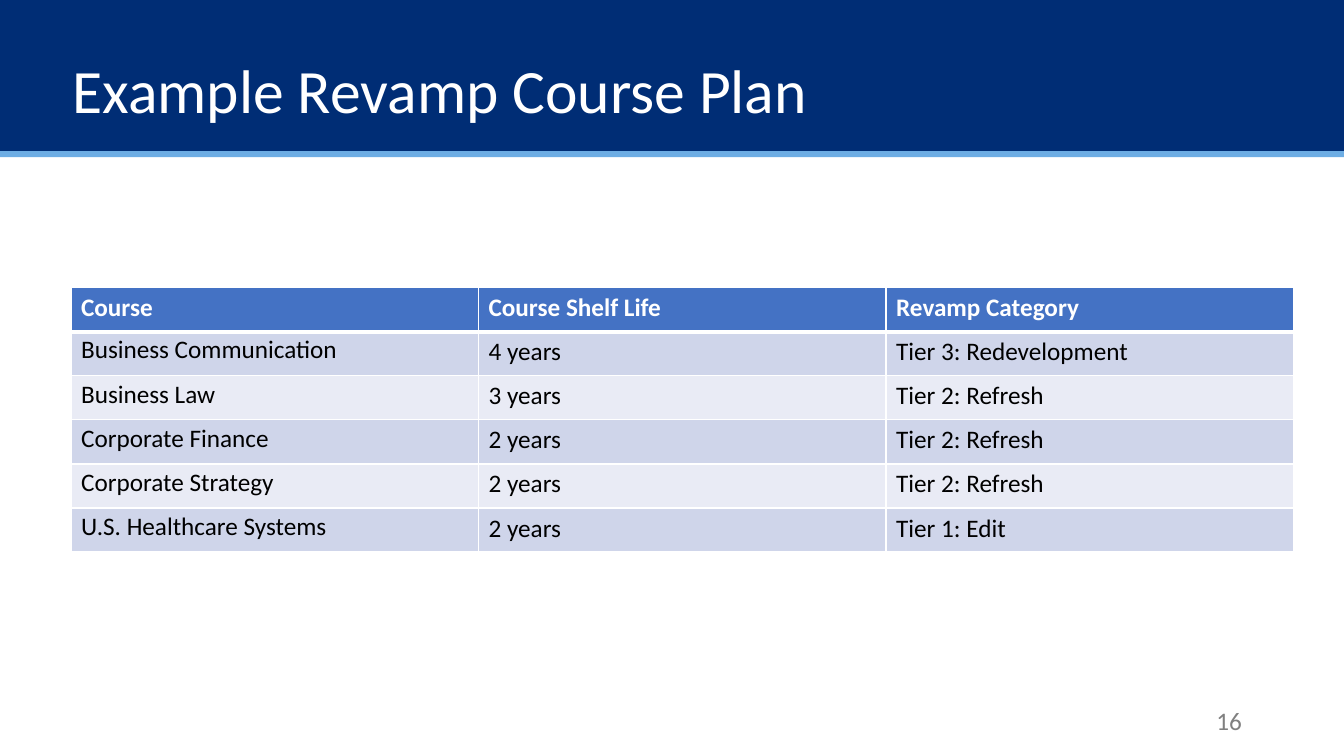
import pptx
import pptx.dml.color
import pptx.enum.shapes
import pptx.enum.text
import pptx.oxml
import pptx.oxml.ns
import pptx.util

Cm = pptx.util.Cm
Pt = pptx.util.Pt
RGBColor = pptx.dml.color.RGBColor
ALIGN = pptx.enum.text.PP_ALIGN

NAVY = RGBColor(0x00, 0x2D, 0x75)
SKY = RGBColor(0x6D, 0xAD, 0xE4)
HEADER_BLUE = RGBColor(0x44, 0x72, 0xC4)
BAND_DARK = RGBColor(0xCF, 0xD5, 0xEA)
BAND_LIGHT = RGBColor(0xE9, 0xEB, 0xF5)
WHITE = RGBColor(0xFF, 0xFF, 0xFF)
BLACK = RGBColor(0x00, 0x00, 0x00)
GREY = RGBColor(0x80, 0x80, 0x80)

SLIDE_WIDTH, SLIDE_HEIGHT = Cm(33.87), Cm(19.05)
COLUMN_WIDTH, ROW_HEIGHT = Cm(10.27), Cm(1.11)

COURSE_PLAN = [
    ("Course", "Course Shelf Life", "Revamp Category"),
    ("Business Communication", "4 years", "Tier 3: Redevelopment"),
    ("Business Law", "3 years", "Tier 2: Refresh"),
    ("Corporate Finance", "2 years", "Tier 2: Refresh"),
    ("Corporate Strategy", "2 years", "Tier 2: Refresh"),
    ("U.S. Healthcare Systems", "2 years", "Tier 1: Edit"),
]


def write_text(frame, text, *, size=18, color=BLACK, bold=False,
               align=ALIGN.LEFT, line_spacing=None):
    paragraph = frame.paragraphs[0]
    paragraph.alignment = align
    if line_spacing:
        paragraph.line_spacing = line_spacing
    run = paragraph.add_run()
    run.text = text
    run.font.name = "Calibri"
    run.font.size = Pt(size)
    run.font.bold = bold
    run.font.color.rgb = color


def add_band(slide, top, height, color):
    band = slide.shapes.add_shape(
        pptx.enum.shapes.MSO_SHAPE.RECTANGLE, 0, top, SLIDE_WIDTH, height)
    band.shadow.inherit = False
    band.fill.solid()
    band.fill.fore_color.rgb = color
    band.line.fill.background()


def add_label(slide, text, left, top, width, height, inset=Cm(0.25), **text_format):
    frame = slide.shapes.add_textbox(left, top, width, height).text_frame
    frame.word_wrap = True
    frame.vertical_anchor = pptx.enum.text.MSO_ANCHOR.TOP
    frame.margin_left = frame.margin_right = inset
    write_text(frame, text, **text_format)


def set_borders(cell, top, bottom):
    properties = cell._tc.get_or_add_tcPr()
    widths = {"L": 1, "R": 1, "T": top, "B": bottom}
    for position, (side, width) in enumerate(widths.items()):
        border = pptx.oxml.parse_xml(
            f'<a:ln{side} {pptx.oxml.ns.nsdecls("a")} w="{Pt(width)}">'
            f'<a:solidFill><a:srgbClr val="{WHITE}"/></a:solidFill></a:ln{side}>')
        properties.insert(position, border)


def add_course_table(slide, left, top):
    row_count, column_count = len(COURSE_PLAN), len(COURSE_PLAN[0])
    table = slide.shapes.add_table(
        row_count, column_count, left, top,
        COLUMN_WIDTH * column_count, ROW_HEIGHT * row_count).table
    for column in table.columns:
        column.width = COLUMN_WIDTH
    for row_index, course in enumerate(COURSE_PLAN):
        table.rows[row_index].height = ROW_HEIGHT
        is_header = row_index == 0
        band = BAND_DARK if row_index % 2 else BAND_LIGHT
        for column_index, text in enumerate(course):
            cell = table.cell(row_index, column_index)
            cell.fill.solid()
            cell.fill.fore_color.rgb = HEADER_BLUE if is_header else band
            # The header is set off by a thicker rule
            set_borders(cell, top=3 if row_index == 1 else 1,
                        bottom=3 if is_header else 1)
            is_course_name = column_index == 0 and not is_header
            write_text(cell.text_frame, text, bold=is_header,
                       color=WHITE if is_header else BLACK,
                       line_spacing=0.9 if is_course_name else None)


def main():
    presentation = pptx.Presentation()
    presentation.slide_width = SLIDE_WIDTH
    presentation.slide_height = SLIDE_HEIGHT
    slide = presentation.slides.add_slide(presentation.slide_layouts[6])

    # Title banner
    add_band(slide, 0, Cm(3.81), NAVY)
    add_band(slide, Cm(3.81), Cm(0.15), SKY)

    # Course plan
    add_course_table(slide, Cm(1.79), Cm(7.25))

    # Page number and title
    add_label(slide, "16", Cm(23.93), Cm(17.65), Cm(7.62), Cm(1.02),
              color=GREY, align=ALIGN.RIGHT)
    add_label(slide, "Example Revamp Course Plan",
              Cm(1.7), Cm(1.4), Cm(22.86), Cm(1.57), inset=Cm(0.13),
              size=44, color=WHITE, line_spacing=0.9)

    presentation.save("out.pptx")


if __name__ == "__main__":
    main()
